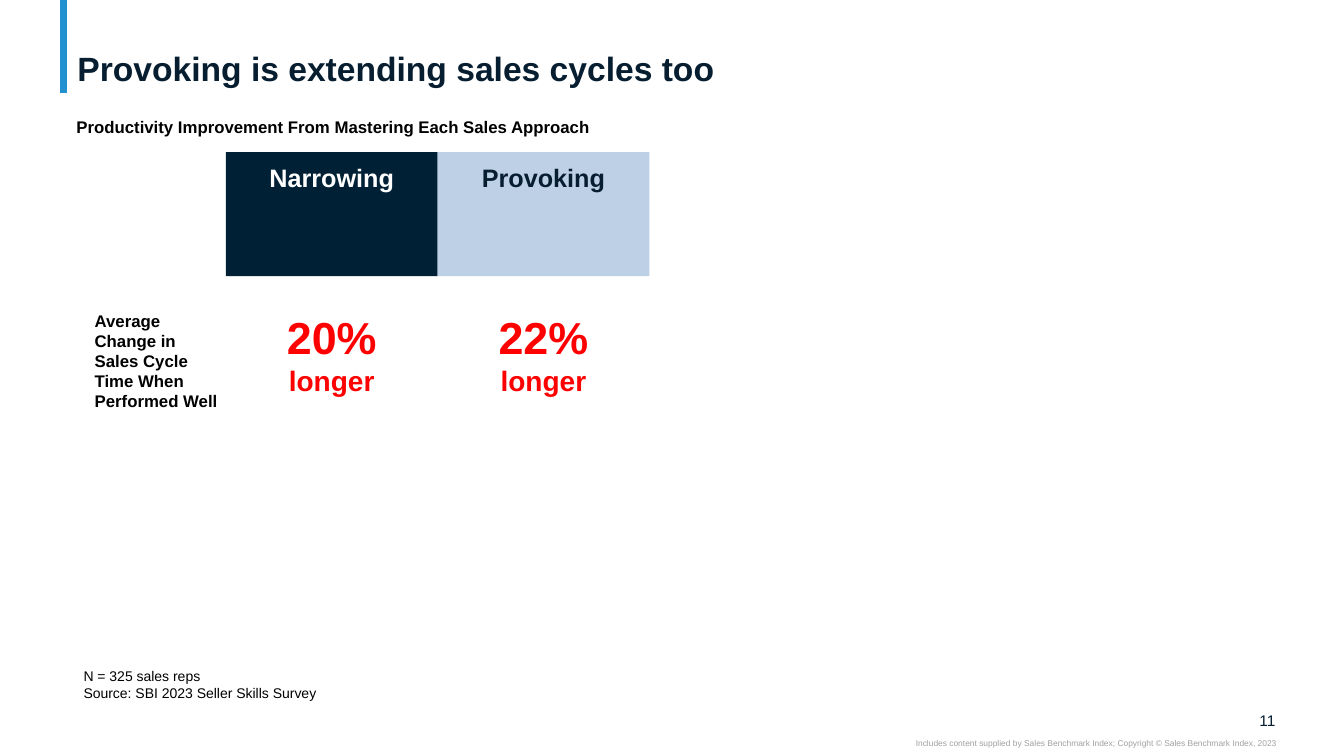
from dataclasses import dataclass

from lxml.etree import SubElement
from pptx import Presentation
from pptx.dml.color import RGBColor
from pptx.enum.shapes import MSO_CONNECTOR, MSO_SHAPE
from pptx.enum.text import MSO_ANCHOR, PP_ALIGN
from pptx.oxml.ns import qn
from pptx.slide import Slide
from pptx.text.text import TextFrame
from pptx.util import Inches, Pt


@dataclass(frozen=True)
class Theme:
    font: str = "Arial"
    ink: str = "071E31"
    black: str = "000000"
    white: str = "FFFFFF"
    grey: str = "A0A0A0"
    accent: str = "2391CF"
    navy: str = "002036"
    pale_blue: str = "BED0E5"
    alert: str = "FF0000"
    title_size: int = 24
    figure_size: int = 32
    unit_size: int = 20
    heading_size: int = 18
    label_size: int = 12
    number_size: int = 11
    note_size: int = 10
    credit_size: int = 6


THEME = Theme()
DEFAULT_INSETS = (0.1, 0.05, 0.1, 0.05)
NO_INSETS = (0, 0, 0, 0)


@dataclass(frozen=True)
class Label:
    text: str
    area: tuple[float, float, float, float]
    sizes: tuple[int, ...]
    color: str = THEME.black
    bold: bool = False
    align: PP_ALIGN = PP_ALIGN.LEFT
    anchor: MSO_ANCHOR = MSO_ANCHOR.TOP
    insets: tuple[float, float, float, float] = DEFAULT_INSETS
    line_spacing: float | None = None


@dataclass(frozen=True)
class Approach:
    name: str
    change: str
    fill: str
    text_color: str


LABELS = [
    Label("11", (12.32, 7.05, 0.33, 0.19), (THEME.number_size,), THEME.ink,
          align=PP_ALIGN.RIGHT, anchor=MSO_ANCHOR.MIDDLE, insets=NO_INSETS),
    Label("Includes content supplied by Sales Benchmark Index; "
          "Copyright © Sales Benchmark Index, 2023",
          (7.5, 7.32, 5.16, 0.1), (THEME.credit_size,), THEME.grey,
          align=PP_ALIGN.RIGHT, insets=NO_INSETS),
    Label("Provoking is extending sales cycles too", (0.67, 0.04, 11.99, 0.84),
          (THEME.title_size,), THEME.ink, bold=True, anchor=MSO_ANCHOR.BOTTOM,
          insets=(0.1, 0, 0.1, 0), line_spacing=0.9),
    Label("Productivity Improvement From Mastering Each Sales Approach",
          (0.66, 1.11, 6.37, 0.3), (THEME.label_size,), bold=True),
    Label("Average Change in Sales Cycle Time When Performed Well",
          (0.84, 3.03, 1.42, 1.31), (THEME.label_size,), bold=True),
    Label("N = 325 sales reps\nSource: SBI 2023 Seller Skills Survey",
          (0.73, 6.57, 4.85, 0.44), (THEME.note_size,)),
]

APPROACHES = [
    Approach("Narrowing", "20%", THEME.navy, THEME.white),
    Approach("Provoking", "22%", THEME.pale_blue, THEME.ink),
]
COLUMN_LEFT, COLUMN_WIDTH = 2.24, 2.1
FIGURE_WIDTH = 1.51


def write(frame: TextFrame, label: Label) -> None:
    """Fill a frame; each run in a paragraph takes the next of the label's sizes."""
    frame.word_wrap = True
    frame.vertical_anchor = label.anchor
    (frame.margin_left, frame.margin_top,
     frame.margin_right, frame.margin_bottom) = map(Inches, label.insets)
    frame.text = label.text
    for paragraph in frame.paragraphs:
        paragraph.alignment = label.align
        if label.line_spacing:
            paragraph.line_spacing = label.line_spacing
        for span, size in zip(paragraph.runs, label.sizes):
            span.font.name = THEME.font
            span.font.size = Pt(size)
            span.font.bold = label.bold
            span.font.color.rgb = RGBColor.from_string(label.color)


def add_label(page: Slide, label: Label) -> None:
    box = page.shapes.add_textbox(*map(Inches, label.area))
    write(box.text_frame, label)


def add_heading(page: Slide, label: Label, fill: str) -> None:
    box = page.shapes.add_shape(MSO_SHAPE.RECTANGLE, *map(Inches, label.area))
    box.shadow.inherit = False
    box.fill.solid()
    box.fill.fore_color.rgb = RGBColor.from_string(fill)
    box.line.fill.background()
    write(box.text_frame, label)


def add_approach(page: Slide, approach: Approach, column: int) -> None:
    left = COLUMN_LEFT + column * COLUMN_WIDTH
    heading = Label(approach.name, (left, 1.51, COLUMN_WIDTH, 1.23),
                    (THEME.heading_size,), approach.text_color, bold=True,
                    align=PP_ALIGN.CENTER, insets=(0.3, 0.1, 0.3, 0.05))
    add_heading(page, heading, approach.fill)
    figure_left = left + (COLUMN_WIDTH - FIGURE_WIDTH) / 2
    add_label(page, Label(f"{approach.change}\vlonger",
                          (figure_left, 3.02, FIGURE_WIDTH, 0.98),
                          (THEME.figure_size, THEME.unit_size), THEME.alert,
                          bold=True, align=PP_ALIGN.CENTER))


def add_accent_bar(page: Slide) -> None:
    bar = page.shapes.add_connector(MSO_CONNECTOR.STRAIGHT, Inches(0.63), Inches(0),
                                    Inches(0.63), Inches(0.92))
    bar.line.color.rgb = RGBColor.from_string(THEME.accent)
    bar.line.width = Pt(5)
    SubElement(bar._element.spPr, qn("a:effectLst"))


def main() -> None:
    deck = Presentation()
    deck.slide_width, deck.slide_height = Inches(13.33), Inches(7.5)
    page = deck.slides.add_slide(deck.slide_layouts[6])
    add_accent_bar(page)
    for label in LABELS:
        add_label(page, label)
    for column, approach in enumerate(APPROACHES):
        add_approach(page, approach, column)
    deck.save("out.pptx")


if __name__ == "__main__":
    main()
